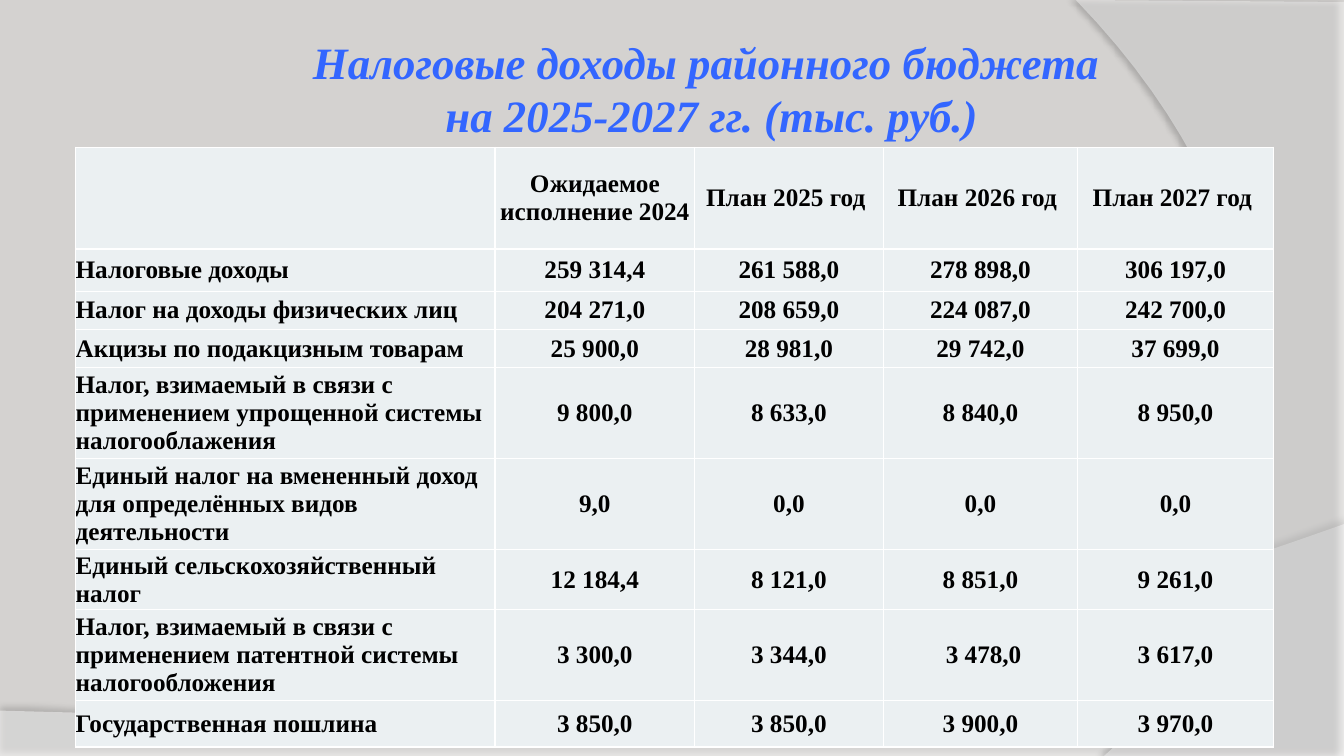
from lxml import etree
from pptx import Presentation
from pptx.dml.color import RGBColor
from pptx.enum.text import MSO_ANCHOR as ANCHOR, PP_ALIGN as ALIGN
from pptx.oxml import parse_xml
from pptx.oxml.ns import nsdecls, qn
from pptx.util import Inches, Pt

# Content
TITLE = ("Налоговые доходы районного бюджета ", "на 2025-2027 гг. (тыс. руб.)")
ROWS = [
    ("", "Ожидаемое исполнение 2024", "План 2025 год ", "План 2026 год ", "План 2027 год "),
    ("Налоговые доходы", "259 314,4", "261 588,0", "278 898,0", "306 197,0"),
    ("Налог на доходы физических лиц", "204 271,0", "208 659,0", "224 087,0", "242 700,0"),
    ("Акцизы по подакцизным товарам", "25 900,0", "28 981,0", "29 742,0", "37 699,0"),
    ("Налог, взимаемый в связи с применением упрощенной системы налогооблажения",
     "9 800,0", "8 633,0", "8 840,0", "8 950,0"),
    ("Единый налог на вмененный доход для определённых видов деятельности",
     "9,0", "0,0", "0,0", "0,0"),
    ("Единый сельскохозяйственный налог", "12 184,4", "8 121,0", "8 851,0", "9 261,0"),
    ("Налог, взимаемый в связи с применением патентной системы налогообложения",
     "3 300,0", "3 344,0", " 3 478,0", "3 617,0"),
    ("Государственная пошлина", "3 850,0", "3 850,0", "3 900,0", "3 970,0"),
]
COL_WIDTHS = (4.16, 1.98, 1.87, 1.93, 1.94)
ROW_HEIGHTS = (1.01, 0.42, 0.38, 0.38, 0.86, 0.86, 0.57, 0.86, 0.46)
W, H = 13.33, 7.5
FONT = "Times New Roman"

# Background waves: corner points, then a curve (three control points) back to the start
WAVES = [
    dict(corners=[(0, 7.05), (0, H), (W, H), (W, 5.2)],
         curve=[(7.45, 7.29), (5.21, 7.19), (0, 7.05)],
         opacity=45, shadow=35, dist=3.5, angle=270),
    dict(corners=[(W, 0.02), (W, H), (10.95, H)],
         curve=[(12.46, 6.19), (13.57, 3), (10.67, 0)],
         opacity=40, shadow=45, dist=4, angle=180),
]


def color(hex_text):
    return RGBColor.from_string(hex_text)


def bezier(p0, p1, p2, p3, steps=40):
    for i in range(1, steps + 1):
        t = i / steps
        u = 1 - t
        yield tuple(u**3 * a + 3 * u * u * t * b + 3 * u * t * t * c + t**3 * d
                    for a, b, c, d in zip(p0, p1, p2, p3))


def add_wave(slide, corners, curve, opacity, shadow, dist, angle):
    outline = corners + list(bezier(corners[-1], *curve))
    points = [(Inches(x), Inches(y)) for x, y in outline]
    builder = slide.shapes.build_freeform(*points[0])
    builder.add_line_segments(points[1:], close=True)
    sp = builder.convert_to_shape()
    sp.fill.solid()
    sp.fill.fore_color.rgb = color("FFFFFF")
    sp.line.fill.background()
    clr = sp.fill._xPr.find(qn("a:solidFill"))[0]
    etree.SubElement(clr, qn("a:alpha"), val=str(opacity * 1000))
    sp._element.spPr.append(parse_xml(
        f'<a:effectLst {nsdecls("a")}><a:outerShdw blurRad="{Pt(4)}" dist="{Pt(dist)}" '
        f'dir="{angle * 60000}" algn="ctr" rotWithShape="0"><a:srgbClr val="000000">'
        f'<a:alpha val="{shadow * 1000}"/></a:srgbClr></a:outerShdw></a:effectLst>'))


def add_run(p, text, size, hex_text, italic=False):
    r = p.add_run()
    r.text = text
    r.font.name, r.font.size = FONT, Pt(size)
    r.font.bold, r.font.italic = True, italic
    r.font.color.rgb = color(hex_text)


def style_cell(cell):
    tc_pr = cell._tc.get_or_add_tcPr()
    for side in "LRTB":
        tc_pr.append(parse_xml(
            f'<a:ln{side} {nsdecls("a")} w="{Pt(1)}"><a:solidFill>'
            f'<a:srgbClr val="FFFFFF"/></a:solidFill></a:ln{side}>'))
    cell.fill.solid()
    cell.fill.fore_color.rgb = color("EBF0F2")
    cell.margin_left = cell.margin_right = cell.margin_top = cell.margin_bottom = 0
    cell.vertical_anchor = ANCHOR.MIDDLE


prs = Presentation()
prs.slide_width, prs.slide_height = Inches(W), Inches(H)
slide = prs.slides.add_slide(prs.slide_layouts[6])

# Background
slide.background.fill.solid()
slide.background.fill.fore_color.rgb = color("D4D2D0")
for wave in WAVES:
    add_wave(slide, **wave)

# Title
box = slide.shapes.add_textbox(Inches(2.97), Inches(0.29), Inches(8.18), Inches(1.18))
tf = box.text_frame
tf.word_wrap = False
for i, line in enumerate(TITLE):
    p = tf.add_paragraph() if i else tf.paragraphs[0]
    p.alignment = ALIGN.CENTER
    add_run(p, line, 32, "3366FF", italic=True)

# Tax revenue table
table = slide.shapes.add_table(
    len(ROWS), len(COL_WIDTHS), Inches(0.75), Inches(1.46),
    Inches(sum(COL_WIDTHS)), Inches(sum(ROW_HEIGHTS))).table
for column, width in zip(table.columns, COL_WIDTHS):
    column.width = Inches(width)
for row, height, texts in zip(table.rows, ROW_HEIGHTS, ROWS):
    row.height = Inches(height)
    for i, (cell, text) in enumerate(zip(row.cells, texts)):
        style_cell(cell)
        p = cell.text_frame.paragraphs[0]
        p.alignment = ALIGN.CENTER if i else ALIGN.LEFT
        if text:
            add_run(p, text, 18, "000000")

prs.save("out.pptx")
